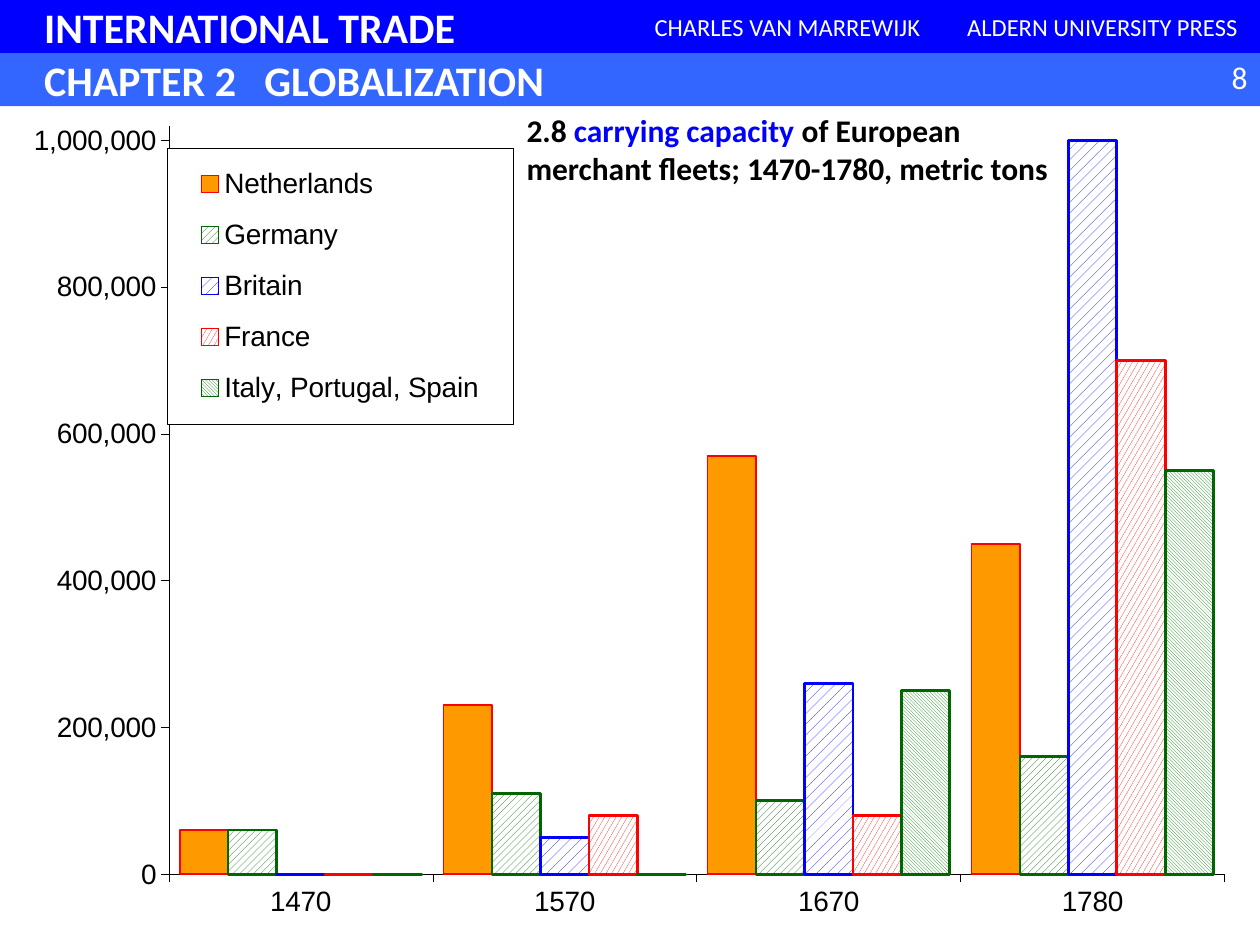
from lxml.etree import SubElement
from pptx import Presentation
from pptx.chart.data import CategoryChartData
from pptx.dml.color import RGBColor
from pptx.enum.chart import XL_CHART_TYPE as ChartType
from pptx.enum.chart import XL_LEGEND_POSITION as LegendPosition
from pptx.enum.chart import XL_TICK_MARK as TickMark
from pptx.enum.dml import MSO_PATTERN as Pattern
from pptx.enum.shapes import MSO_SHAPE as Shape
from pptx.enum.text import MSO_ANCHOR as Anchor
from pptx.enum.text import PP_ALIGN as Align
from pptx.oxml import parse_xml
from pptx.oxml.ns import nsdecls, qn
from pptx.util import Cm, Pt

BLACK, WHITE, BLUE, LIGHT_BLUE = "000000", "FFFFFF", "0000FF", "3366FF"
RED, GREEN, ORANGE = "FF0000", "006600", "FF9900"
BAND_HEIGHT = 1.07

YEARS = ["1470", "1570", "1670", "1780"]
# name, tonnage, pattern (None is solid), fill colour, line colour, line width
FLEETS = [
    ("Netherlands", (60000, 230000, 570000, 450000), None, ORANGE, RED, 1),
    ("Germany", (60000, 110000, 100000, 160000),
     Pattern.WIDE_UPWARD_DIAGONAL, GREEN, GREEN, 1.5),
    ("Britain", (0, 50000, 260000, 1000000), Pattern.PERCENT_20, BLUE, BLUE, 1.5),
    ("France", (0, 80000, 80000, 700000), Pattern.LARGE_CONFETTI, RED, RED, 1.5),
    ("Italy, Portugal, Spain", (0, 0, 250000, 550000),
     Pattern.LIGHT_DOWNWARD_DIAGONAL, "008000", GREEN, 1.5),
]


def rgb(color):
    return RGBColor.from_string(color)


def set_font(font, name, size, color, bold=False):
    font.name, font.size, font.bold = name, Pt(size), bold
    font.color.rgb = rgb(color)


def add_band(slide, left, top, width, color, text, size, bold=False,
             align=Align.LEFT, indent=0):
    """Add a filled header rectangle; the indent moves its first line only."""
    band = slide.shapes.add_shape(
        Shape.RECTANGLE, Cm(left), Cm(top), Cm(width), Cm(BAND_HEIGHT))
    band.shadow.inherit = False
    band.fill.solid()
    band.fill.fore_color.rgb = rgb(color)
    band.line.fill.background()
    frame = band.text_frame
    frame.vertical_anchor = Anchor.MIDDLE
    paragraph = frame.paragraphs[0]
    paragraph.text = text
    paragraph.alignment = align
    paragraph._p.get_or_add_pPr().set("indent", str(Cm(indent)))
    set_font(paragraph.font, "Calibri", size, WHITE, bold)


def add_page_number(slide, number):
    box = slide.shapes.add_textbox(Cm(23.7), Cm(1.04), Cm(1.7), Cm(1.02))
    box.text_frame.word_wrap = True
    paragraph = box.text_frame.paragraphs[0]
    paragraph.text = number
    paragraph.alignment = Align.RIGHT
    set_font(paragraph.font, "Calibri", 18, WHITE)


def set_layout(parent, position, x, y, width, height, inner=False):
    """Place a chart part by fractions of the chart area."""
    for old in parent.findall(qn("c:layout")):
        parent.remove(old)
    layout = parse_xml(f"<c:layout {nsdecls('c')}/>")
    manual = SubElement(layout, qn("c:manualLayout"))
    settings = [("layoutTarget", "inner")] if inner else []
    settings += [("xMode", "edge"), ("yMode", "edge"),
                 ("x", x), ("y", y), ("w", width), ("h", height)]
    for tag, value in settings:
        SubElement(manual, qn(f"c:{tag}")).set("val", str(value))
    parent.insert(position, layout)


def format_axis(axis):
    axis.has_major_gridlines = False
    axis.major_tick_mark = TickMark.OUTSIDE
    axis.minor_tick_mark = TickMark.NONE
    axis.format.line.color.rgb = rgb(BLACK)
    axis.format.line.width = Pt(0.25)
    set_font(axis.tick_labels.font, "Arial", 16, BLACK)


def format_series(series, pattern, fill_color, line_color, line_width):
    fill = series.format.fill
    if pattern is None:
        fill.solid()
    else:
        fill.patterned()
        fill.pattern = pattern
        fill.back_color.rgb = rgb(WHITE)
    fill.fore_color.rgb = rgb(fill_color)
    series.format.line.color.rgb = rgb(line_color)
    series.format.line.width = Pt(line_width)
    series.invert_if_negative = False


def add_legend(chart):
    chart.has_legend = True
    legend = chart.legend
    legend.position = LegendPosition.LEFT
    legend.include_in_layout = False
    set_font(legend.font, "Arial", 16, BLACK)
    element = legend._element
    set_layout(element, 1, 0.133, 0.052, 0.274, 0.328)
    box = parse_xml(
        f'<c:spPr {nsdecls("c", "a")}>'
        f'<a:solidFill><a:srgbClr val="{WHITE}"/></a:solidFill>'
        f'<a:ln w="3175"><a:solidFill><a:srgbClr val="{BLACK}"/></a:solidFill></a:ln>'
        '</c:spPr>')
    element.find(qn("c:txPr")).addprevious(box)


def add_fleet_chart(slide):
    data = CategoryChartData(number_format="#,##0")
    data.categories = YEARS
    for name, tonnage, *_ in FLEETS:
        data.add_series(name, tonnage)
    chart = slide.shapes.add_chart(
        ChartType.COLUMN_CLUSTERED, Cm(0), Cm(2.11), Cm(25.4), Cm(16.94), data).chart
    chart.has_title = False
    set_font(chart.font, "Arial", 10, BLACK)
    plot = chart.plots[0]
    plot.gap_width, plot.overlap, plot.vary_by_categories = 45, 0, False
    for series, (_, _, *style) in zip(plot.series, FLEETS):
        format_series(series, *style)
    format_axis(chart.category_axis)
    value_axis = chart.value_axis
    format_axis(value_axis)
    value_axis.minimum_scale, value_axis.maximum_scale = 0, 1020000
    value_axis.major_unit = 200000
    value_axis.tick_labels.number_format = "#,##0"
    value_axis.tick_labels.number_format_is_linked = False
    plot_area = chart._chartSpace.chart.plotArea
    set_layout(plot_area, 0, 0.134, 0.025, 0.838, 0.891, inner=True)
    add_legend(chart)


def place_title(slide):
    """Fill the title placeholder and bring it in front of the chart."""
    title = slide.shapes.title
    title.left, title.top = Cm(10.36), Cm(2.11)
    title.width, title.height = Cm(11.23), Cm(1.8)
    frame = title.text_frame
    frame.word_wrap = True
    frame.vertical_anchor = Anchor.TOP
    paragraph = frame.paragraphs[0]
    paragraph.alignment = Align.LEFT
    for text, color in [("2.8 ", BLACK), ("carrying capacity ", BLUE),
                        ("of European merchant fleets; 1470-1780, metric tons", BLACK)]:
        run = paragraph.add_run()
        run.text = text
        set_font(run.font, "Calibri", 18, color, bold=True)
    slide.shapes._spTree.append(title._element)


def main():
    presentation = Presentation()
    presentation.slide_width, presentation.slide_height = Cm(25.4), Cm(19.05)
    slide = presentation.slides.add_slide(presentation.slide_layouts[5])
    add_band(slide, 0, 0, 25.4, BLUE, "INTERNATIONAL TRADE", 24, True, indent=0.64)
    add_band(slide, 12.7, 0, 6.35, BLUE, "CHARLES VAN MARREWIJK", 14, align=Align.CENTER)
    add_band(slide, 19.05, 0, 6.35, BLUE, "ALDERN UNIVERSITY PRESS", 14, align=Align.CENTER)
    add_band(slide, 0, BAND_HEIGHT, 25.4, LIGHT_BLUE, "CHAPTER 2\tGLOBALIZATION",
             24, True, indent=0.64)
    add_page_number(slide, "8")
    add_fleet_chart(slide)
    place_title(slide)
    presentation.save("out.pptx")


if __name__ == "__main__":
    main()
